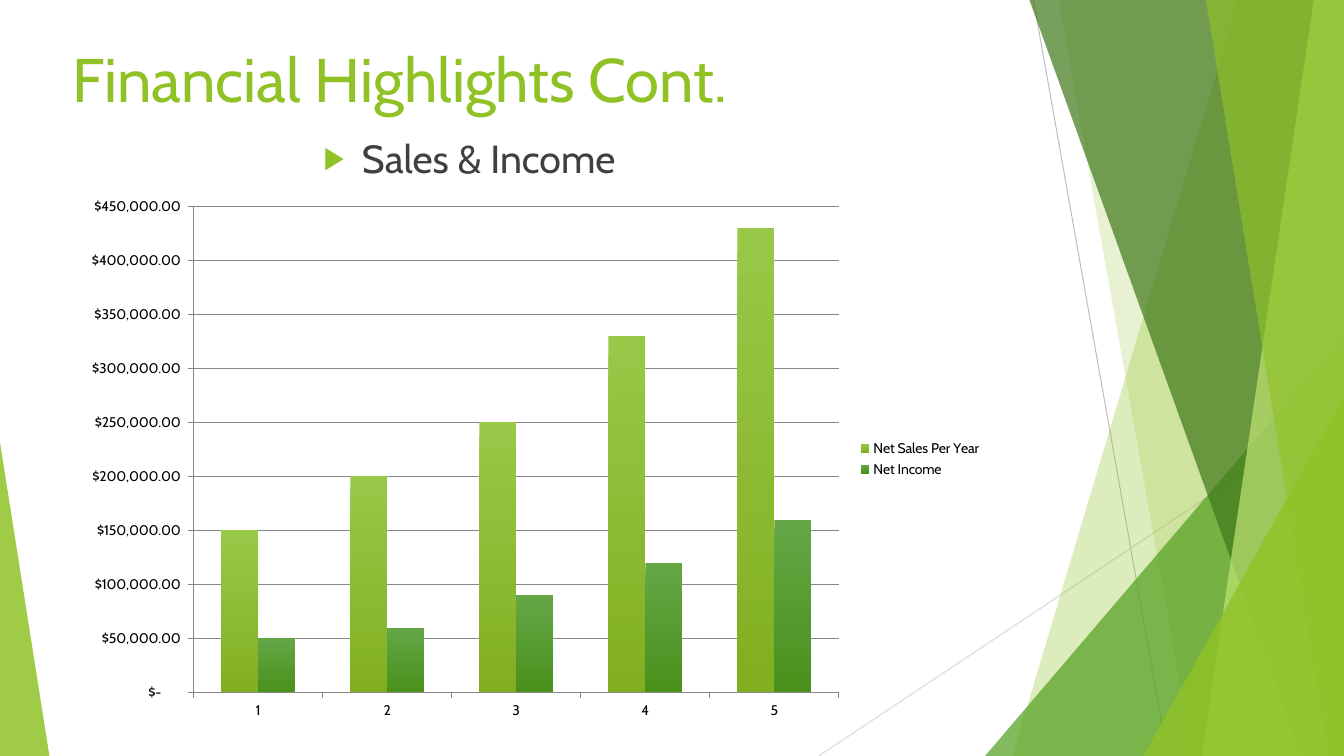
from lxml.etree import SubElement
from pptx import Presentation
from pptx.chart.data import CategoryChartData
from pptx.dml.color import RGBColor
from pptx.enum.chart import XL_CHART_TYPE, XL_LEGEND_POSITION, XL_TICK_MARK
from pptx.enum.shapes import MSO_CONNECTOR, MSO_SHAPE
from pptx.enum.text import MSO_ANCHOR, MSO_AUTO_SIZE, PP_ALIGN
from pptx.oxml.ns import qn
from pptx.util import Inches, Pt

COLORS = {
    "lime": "90C226", "green": "54A021", "forest": "3F7819", "pale": "C0E474",
    "body": "404040", "axis": "868686", "black": "000000",
    "line_dark": "BFBFBF", "line_light": "D9D9D9",
    "lime_top": "98C848", "lime_foot": "82AF20",
    "green_top": "64A646", "green_foot": "4A911C",
}
FONT = "Cabin"
WIDTH, HEIGHT = 13.33, 7.5
ACCOUNTING = ('_("$"* #,##0.00_);_("$"* \\(#,##0.00\\);'
              '_("$"* "-"??_);_(@_)')
NET_SALES = (150000, 200000, 250000, 330000, 430000)
NET_INCOME = (50000, 60000, 90000, 120000, 160000)


def rgb(name):
    """Return the named palette colour."""
    return RGBColor.from_string(COLORS[name])


def style_font(font, size, color):
    """Set face, size and colour of a font."""
    font.name, font.size, font.bold = FONT, Pt(size), False
    font.color.rgb = rgb(color)


def write(placeholder, text, box, size, color, space_before=0):
    """Move a placeholder to its box and fill it with one formatted paragraph."""
    placeholder.left, placeholder.top, placeholder.width, placeholder.height = map(Inches, box)
    frame = placeholder.text_frame
    frame.word_wrap = True
    frame.auto_size = MSO_AUTO_SIZE.NONE
    frame.vertical_anchor = MSO_ANCHOR.TOP
    paragraph = frame.paragraphs[0]
    paragraph.alignment = PP_ALIGN.LEFT
    paragraph.space_before = Pt(space_before)
    run = paragraph.add_run()
    run.text = text
    style_font(run.font, size, color)
    return paragraph


def add_arrow_bullet(paragraph):
    """Give a paragraph a hanging triangle bullet."""
    properties = paragraph._p.get_or_add_pPr()
    properties.set("marL", str(Inches(0.38)))
    properties.set("indent", str(-Inches(0.38)))
    bullet_color = SubElement(properties, qn("a:buClr"))
    SubElement(bullet_color, qn("a:srgbClr"), val=COLORS["lime"])
    SubElement(properties, qn("a:buSzPct"), val="80000")
    SubElement(properties, qn("a:buFont"), typeface="Arial")
    SubElement(properties, qn("a:buChar"), char="▶")


def paint(facet, color, opacity):
    """Fill a facet with a translucent colour and no outline."""
    facet.shadow.inherit = False
    facet.line.fill.background()
    facet.fill.solid()
    facet.fill.fore_color.rgb = rgb(color)
    tint = facet._element.spPr.find(qn("a:solidFill"))[0]
    SubElement(tint, qn("a:alpha"), val=str(opacity * 1000))


def add_hairline(slide, start, end, color):
    """Draw a thin straight line without a shadow."""
    hairline = slide.shapes.add_connector(MSO_CONNECTOR.STRAIGHT, *map(Inches, start + end))
    hairline.line.color.rgb = rgb(color)
    hairline.line.width = Pt(0.75)
    SubElement(hairline._element.spPr, qn("a:effectLst"))


def add_wedge(slide, box, apex, color, opacity):
    """Draw a right triangle whose apex lies over one side of its box."""
    wedge = slide.shapes.add_shape(MSO_SHAPE.ISOSCELES_TRIANGLE, *map(Inches, box))
    wedge.adjustments[0] = apex
    paint(wedge, color, opacity)


def add_blade(slide, box, top_inset, bottom_inset, color, opacity):
    """Draw a slanted blade reaching from its two insets to the box's right edge."""
    left, top, width, height = box
    right, bottom = left + width, top + height
    corners = [(right, top), (right, bottom), (right - bottom_inset, bottom)]
    builder = slide.shapes.build_freeform(Inches(right - top_inset), Inches(top), scale=1.0)
    builder.add_line_segments([(Inches(x), Inches(y)) for x, y in corners], close=True)
    paint(builder.convert_to_shape(), color, opacity)


def add_facets(slide, box):
    """Layer the hairlines, blades and wedges along the right of the box."""
    left, top, width, height = box
    right, bottom = left + width, top + height
    add_hairline(slide, (right - 3.08, top), (right - 1.75, bottom), "line_dark")
    add_hairline(slide, (right, top + 4.03), (left, bottom), "line_light")

    def corner_wedge(wedge_width, wedge_height, color, opacity):
        """Set a wedge into the bottom right corner."""
        wedge_box = (right - wedge_width, bottom - wedge_height, wedge_width, wedge_height)
        add_wedge(slide, wedge_box, 1, color, opacity)

    add_blade(slide, box, 1.05, 3.29, "lime", 30)
    add_blade(slide, box, 2.83, 1.5, "lime", 20)
    corner_wedge(3.56, 4.17, "green", 72)
    for blade in ((3.12, 0.42, "forest", 70), (0.3, 1.41, "pale", 70), (1.37, 0.15, "lime", 65)):
        add_blade(slide, box, *blade)
    corner_wedge(1.99, 3.57, "lime", 80)


def fix_plot_area(chart, chart_size, plot_box):
    """Pin the inner plot area to a box given in inches within the chart."""
    plot_area = chart._chartSpace.chart.plotArea
    layout = plot_area.find(qn("c:layout"))
    if layout is None:
        layout = SubElement(plot_area, qn("c:layout"))
        plot_area.insert(0, layout)
    manual = SubElement(layout, qn("c:manualLayout"))
    settings = {"layoutTarget": "inner", "xMode": "edge", "yMode": "edge"}
    for tag, length, whole in zip("xywh", plot_box, chart_size * 2):
        settings[tag] = length / whole
    for tag, value in settings.items():
        SubElement(manual, qn(f"c:{tag}"), val=str(value))


def add_income_chart(slide, box):
    """Place the clustered columns of yearly sales and income."""
    figures = CategoryChartData(number_format=ACCOUNTING)
    figures.categories = [str(year) for year in range(1, 6)]
    figures.add_series("Net Sales Per Year", NET_SALES)
    figures.add_series("Net Income", NET_INCOME)
    chart = slide.shapes.add_chart(
        XL_CHART_TYPE.COLUMN_CLUSTERED, *map(Inches, box), figures).chart
    style_font(chart.font, 10, "black")
    chart.has_title = False
    chart.has_legend = True
    chart.legend.position = XL_LEGEND_POSITION.RIGHT
    chart.legend.include_in_layout = False
    fix_plot_area(chart, box[2:], (1.22, 0.19, 6.4, 4.82))

    columns = chart.plots[0]
    columns.gap_width, columns.overlap = 150, 0
    columns.vary_by_categories = False
    for series, hue in zip(columns.series, ("lime", "green")):
        fill = series.format.fill
        fill.gradient()
        fill.gradient_angle = 270
        for stop, end in zip(fill.gradient_stops, ("top", "foot")):
            stop.color.rgb = rgb(f"{hue}_{end}")

    amounts = chart.value_axis
    amounts.minimum_scale, amounts.maximum_scale, amounts.major_unit = 0, 450000, 50000
    amounts.has_major_gridlines = True
    amounts.tick_labels.number_format = ACCOUNTING
    amounts.tick_labels.number_format_is_linked = False
    for axis in (amounts, chart.category_axis):
        axis.major_tick_mark = XL_TICK_MARK.OUTSIDE
    for rule in (amounts, chart.category_axis, amounts.major_gridlines):
        rule.format.line.color.rgb = rgb("axis")
        rule.format.line.width = Pt(0.75)


def build_highlights_slide(presentation):
    """Assemble the financial highlights slide."""
    slide = presentation.slides.add_slide(presentation.slide_layouts[1])
    add_facets(slide, (8.12, 0, WIDTH - 8.12, HEIGHT))
    add_wedge(slide, (0, HEIGHT - 3.11, 0.49, 3.11), 0, "lime", 85)
    write(slide.shapes.title, "Financial Highlights Cont.",
          (0.62, 0.36, 9.4, 1.44), size=44, color="lime")
    subtitle = write(slide.placeholders[1], "Sales & Income",
                     (3.11, 1.28, 3.39, 0.72), size=28, color="body", space_before=10)
    add_arrow_bullet(subtitle)
    add_income_chart(slide, (0.7, 1.86, 9.14, 5.38))


def main():
    """Create and save the presentation."""
    presentation = Presentation()
    presentation.slide_width, presentation.slide_height = Inches(WIDTH), Inches(HEIGHT)
    build_highlights_slide(presentation)
    presentation.save("out.pptx")


if __name__ == "__main__":
    main()
